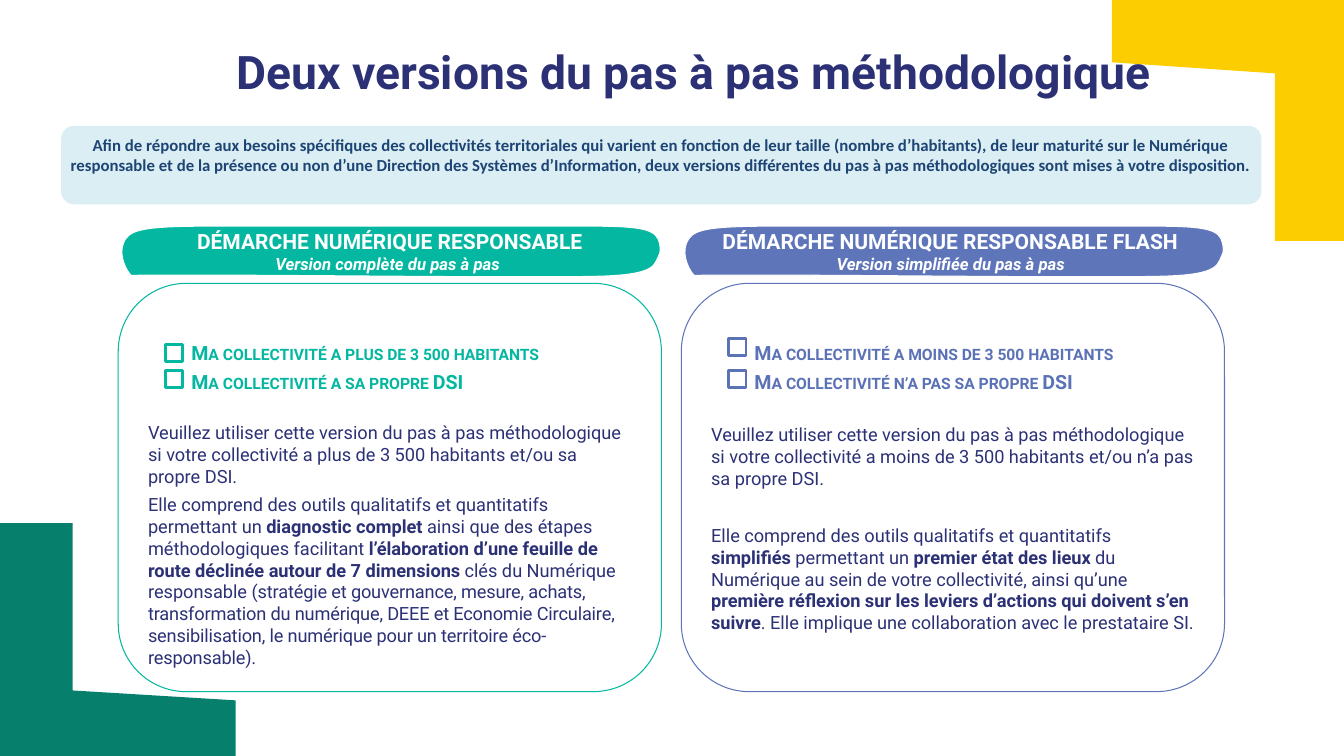
from lxml.etree import QName, SubElement
from pptx import Presentation
from pptx.dml.color import RGBColor
from pptx.enum.shapes import MSO_SHAPE as SHAPE
from pptx.enum.text import MSO_ANCHOR as ANCHOR, PP_ALIGN as ALIGN
from pptx.oxml.ns import qn
from pptx.util import Cm, Pt

NAVY, WHITE = "2C3176", "FFFFFF"
TITLE = "Deux versions du pas à pas méthodologique"
INTRO = ("Afin de répondre aux besoins spécifiques des collectivités territoriales qui varient en "
         "fonction de leur taille (nombre d’habitants), de leur maturité sur le Numérique responsable "
         "et de la présence ou non d’une Direction des Systèmes d’Information, deux versions "
         "différentes du pas à pas méthodologiques sont mises à votre disposition.")

# ** switches bold on and off, ^ starts slightly tighter letters;
# gaps are the points after the criteria and after the first paragraph
VERSIONS = [
    dict(color="03B7A0", check_color="03B7A0", check_tops=(8.69, 9.33), gaps=(19.7, 4.5),
         heading="DÉMARCHE NUMÉRIQUE RESPONSABLE", subtitle="Version complète du pas à pas ",
         criteria=["Ma collectivité a plus de 3 500 habitants", "Ma collectivité a sa propre DSI"],
         body=["Veuillez utiliser cette version du pas à pas méthodologique si votre collectivité a "
               "plus de 3 500 habitants et/ou sa propre DSI.",
               "Elle comprend des outils qualitatifs et quantitatifs permettant un **diagnostic "
               "complet **ainsi que des étapes méthodologiques facilitant **l’élaboration d’une "
               "feuille de route déclinée autour de 7 dimensions **clés du Numérique responsable "
               "(^stratégie et gouvernance, mesure, achats, transformation du numérique, DEEE et "
               "Economie Circulaire, sensibilisation, le numérique pour un territoire "
               "éco-responsable)."]),
    dict(color="5E75BA", check_color="5C72B6", check_tops=(8.53, 9.33), gaps=(21.2, 25),
         heading="DÉMARCHE NUMÉRIQUE RESPONSABLE FLASH ", subtitle="Version simplifiée du pas à pas ",
         criteria=["Ma collectivité a moins de 3 500 habitants",
                   "Ma collectivité n’a pas sa propre DSI"],
         body=["Veuillez utiliser cette version du pas à pas méthodologique si votre collectivité a "
               "moins de 3 500 habitants et/ou n’a pas sa propre DSI.",
               "Elle comprend des outils qualitatifs et quantitatifs **simplifiés** permettant un "
               "**premier état des lieux **du Numérique au sein de votre collectivité, ainsi qu’une "
               "**première réflexion sur les leviers d’actions qui doivent s’en suivre**. Elle "
               "implique une collaboration avec le prestataire SI."]),
]

# Outlines in cm; a step of one point is a straight line, of three points a Bézier curve
YELLOW_CORNER = [[(33.87, 0)], [(28.02, 0)], [(28.02, 1.57)], [(32.13, 1.85)], [(32.13, 6.07)],
                 [(33.87, 6.07)], [(33.87, 0)]]
GREEN_CORNER = [[(1.83, 13.18)], [(0, 13.18)], [(0, 19.05)], [(5.94, 19.05)], [(5.94, 17.65)],
                [(1.83, 17.4)], [(1.83, 13.18)]]
RIBBON = [
    [(13.64, 0.43)],
    [(13.69, 0.68), (13.64, 0.68), (13.57, 0.86)],
    [(13.44, 1.19), (12.88, 1.27), (11.41, 1.27)],
    [(8.66, 1.27)],
    [(7.27, 1.27), (1.93, 1.21), (0.33, 1.24)],
    [(0.23, 1.16), (0, 0.76), (0.13, 0.43)],
    [(0.26, 0.12), (0.48, 0), (2.24, 0)],
    [(11.94, 0)],
    [(13.29, 0), (13.57, 0.1), (13.64, 0.43)],
]
CARD_LEFT, CARD_TOP, CARD_W, CARD_H, CARD_PITCH = 2.98, 7.14, 13.69, 10.29, 14.19
RIBBON_TOP, CHECK_INSET, CHECK_SIZE = 5.7, 1.2, 0.43


def rgb(color):
    return RGBColor.from_string(color)


def paint(sp, fill=None, line=None, width=0.75):
    sp.shadow.inherit = False
    if fill:
        sp.fill.solid()
        sp.fill.fore_color.rgb = rgb(fill)
    else:
        sp.fill.background()
    if line:
        sp.line.color.rgb = rgb(line)
        sp.line.width = Pt(width)
    else:
        sp.line.fill.background()
    return sp


def box(s, kind, x, y, w, h, **look):
    return paint(s.shapes.add_shape(kind, Cm(x), Cm(y), Cm(w), Cm(h)), **look)


def outline(s, steps, left=0, top=0, close=True, **look):
    """Draw all points as lines, then join each group of three into a curve."""
    start, *points = [(Cm(left + x), Cm(top + y)) for step in steps for x, y in step]
    builder = s.shapes.build_freeform(*start)
    builder.add_line_segments(points, close=close)
    sp = builder.convert_to_shape()
    lines = iter(list(sp._element.iter(qn("a:lnTo"))))
    for step in steps[1:]:
        segment = [next(lines) for _ in step]
        if len(step) == 3:
            curve = SubElement(segment[0].getparent(), QName(qn("a:cubicBezTo")))
            segment[0].addprevious(curve)
            for line in segment:
                curve.append(line[0])
                line.getparent().remove(line)
    return paint(sp, **look)


def write(tf, text, size, color, font="Roboto", bold=False, italic=False, small_caps=False,
          align=ALIGN.LEFT, before=0, after=0, margin=0, indent=0):
    """Fill the first paragraph if it is empty, otherwise add one."""
    p = tf.paragraphs[0]
    if p.runs:
        p = tf.add_paragraph()
        p.space_before = Pt(before)
    p.alignment, p.space_after = align, Pt(after)
    if margin:
        pPr = p._p.get_or_add_pPr()
        pPr.set("marL", str(Cm(margin)))
        pPr.set("indent", str(Cm(indent)))
    normal, _, tight = text.partition("^")
    runs = [(part, bold or i % 2 == 1, None) for i, part in enumerate(normal.split("**"))]
    if tight:
        runs.append((tight, bold, "-10"))
    for part, is_bold, spacing in runs:
        r = p.add_run()
        r.text = part
        r.font.name, r.font.size, r.font.color.rgb = font, Pt(size), rgb(color)
        r.font.bold, r.font.italic = is_bold, italic
        if small_caps:
            r._r.get_or_add_rPr().set("cap", "small")
        if spacing:
            r._r.get_or_add_rPr().set("spc", spacing)


def frame(sp, anchor=ANCHOR.TOP, side=0.25, top=0.13, bottom=0.13):
    tf = sp.text_frame
    tf.word_wrap, tf.vertical_anchor = True, anchor
    tf.margin_left = tf.margin_right = Cm(side)
    tf.margin_top, tf.margin_bottom = Cm(top), Cm(bottom)
    return tf


def add_version(s, left, v):
    card = box(s, SHAPE.ROUNDED_RECTANGLE, left, CARD_TOP, CARD_W, CARD_H, line=v["color"])
    tf = frame(card, top=0.94)
    for text, after in zip(v["criteria"], (2.2, v["gaps"][0])):
        write(tf, text, 14, v["check_color"], bold=True, small_caps=True,
              before=2.2, after=after, margin=0.94, indent=0.15)
    for text, after in zip(v["body"], (v["gaps"][1], 4.5)):
        write(tf, text, 13, NAVY, after=after)

    ribbon = outline(s, RIBBON, left, RIBBON_TOP, close=False, fill=v["color"], line=WHITE)
    tf = frame(ribbon, ANCHOR.MIDDLE)
    write(tf, v["heading"], 15, WHITE, bold=True, align=ALIGN.CENTER)
    write(tf, v["subtitle"], 12, WHITE, bold=True, italic=True, align=ALIGN.CENTER)

    for top in v["check_tops"]:
        box(s, SHAPE.RECTANGLE, left + CHECK_INSET, top, CHECK_SIZE, CHECK_SIZE,
            fill=WHITE, line=v["check_color"], width=2)


def main():
    prs = Presentation()
    prs.slide_width, prs.slide_height = Cm(33.87), Cm(19.05)
    s = prs.slides.add_slide(prs.slide_layouts[5])

    outline(s, YELLOW_CORNER, fill="FCCD00")
    outline(s, GREEN_CORNER, fill="06806C")

    title = s.shapes.title
    title.left, title.top, title.width, title.height = Cm(2.64), Cm(1.09), Cm(29.69), Cm(1.42)
    write(frame(title, ANCHOR.MIDDLE, side=0, top=0, bottom=0), TITLE, 33, NAVY,
          bold=True, align=ALIGN.CENTER)
    s.shapes._spTree.append(title._element)  # bring the title in front of the yellow corner

    intro = box(s, SHAPE.ROUNDED_RECTANGLE, 1.54, 3.17, 30.25, 1.98, fill="DBEEF4")
    write(frame(intro, side=0.1), INTRO, 12, "1D4474", font="Calibri", bold=True,
          align=ALIGN.CENTER)

    for i, version in enumerate(VERSIONS):
        add_version(s, CARD_LEFT + i * CARD_PITCH, version)
    prs.save("out.pptx")


if __name__ == "__main__":
    main()
